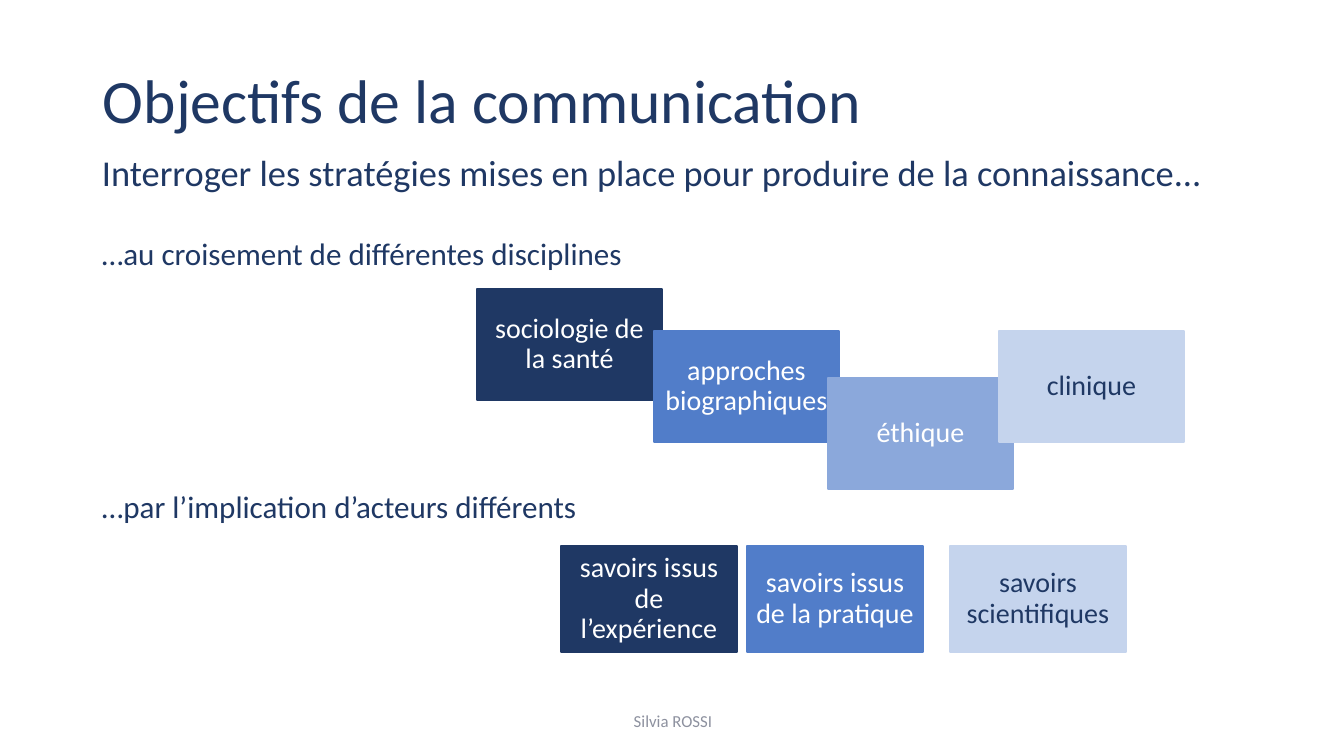
from pptx import Presentation
from pptx.dml.color import RGBColor
from pptx.enum.shapes import MSO_SHAPE
from pptx.enum.text import MSO_ANCHOR, PP_ALIGN
from pptx.util import Emu, Pt

# Content
NAVY, BLUE, SOFT, PALE, WHITE, GREY = (
    "1F3864", "517DC9", "8BA8DB", "C5D4ED", "FFFFFF", "8D919F")

# text, (left, top, width, height) in px, size, colour, anchor, alignment, line spacing
TEXTS = [
    ("Objectifs de la communication", (93, 43, 1159, 122), 44, NAVY,
     MSO_ANCHOR.MIDDLE, PP_ALIGN.LEFT, 0.9),
    ("…au croisement de différentes disciplines", (92, 233, 644, 43), 22.2, NAVY,
     MSO_ANCHOR.BOTTOM, PP_ALIGN.LEFT, 0.8),
    ("Silvia ROSSI", (446, 701, 454, 40), 12, GREY,
     MSO_ANCHOR.MIDDLE, PP_ALIGN.CENTER, 1.0),
    ("…par l’implication d’acteurs différents", (92, 472, 546, 57), 22.2, NAVY,
     MSO_ANCHOR.BOTTOM, PP_ALIGN.LEFT, 0.8),
    ("Interroger les stratégies mises en place pour produire de la connaissance...",
     (92, 145, 1134, 54), 26, NAVY, MSO_ANCHOR.TOP, PP_ALIGN.LEFT, 1.0),
]

# tile size in px, then text, left, top, fill, font colour
TILE_GROUPS = [
    ((185, 111), [
        ("sociologie de la santé", 477, 289, NAVY, WHITE),
        ("approches biographiques", 654, 331, BLUE, WHITE),
        ("éthique", 828, 378, SOFT, WHITE),
        ("clinique", 999, 331, PALE, NAVY),
    ]),
    ((176, 106), [
        ("savoirs issus de l’expérience", 561, 546, NAVY, WHITE),
        ("savoirs issus de la pratique", 747, 546, BLUE, WHITE),
        ("savoirs scientifiques", 950, 546, PALE, NAVY),
    ]),
]


def px(value):
    return Emu(round(value * 914400 / 100.8))


def color(code):
    return RGBColor.from_string(code)


def apply(target, values):
    for name, value in values.items():
        setattr(target, name, value)


def write(box, text, size, ink, anchor, alignment, spacing):
    frame = box.text_frame
    apply(frame, {"word_wrap": True, "vertical_anchor": anchor})
    para = frame.paragraphs[0]
    apply(para, {"alignment": alignment, "line_spacing": spacing})
    span = para.add_run()
    span.text = text
    apply(span.font, {"name": "Calibri", "size": Pt(size)})
    span.font.color.rgb = color(ink)


deck = Presentation()
apply(deck, {"slide_width": px(1344), "slide_height": px(756)})
page = deck.slides.add_slide(deck.slide_layouts[6])

# Headings and footer
for text, area, *style in TEXTS:
    box = page.shapes.add_textbox(*map(px, area))
    write(box, text, *style)

# Coloured tiles, later ones overlapping earlier ones
for size, tiles in TILE_GROUPS:
    for text, left, top, fill, ink in tiles:
        tile = page.shapes.add_shape(MSO_SHAPE.RECTANGLE, *map(px, (left, top, *size)))
        tile.shadow.inherit = False
        tile.fill.solid()
        tile.fill.fore_color.rgb = color(fill)
        tile.line.color.rgb = color(fill)
        tile.line.width = Pt(1)
        sides = ("left", "top", "right", "bottom")
        apply(tile.text_frame, {f"margin_{side}": px(8) for side in sides})
        write(tile, text, 20, ink, MSO_ANCHOR.MIDDLE, PP_ALIGN.CENTER, 0.9)

deck.save("out.pptx")
